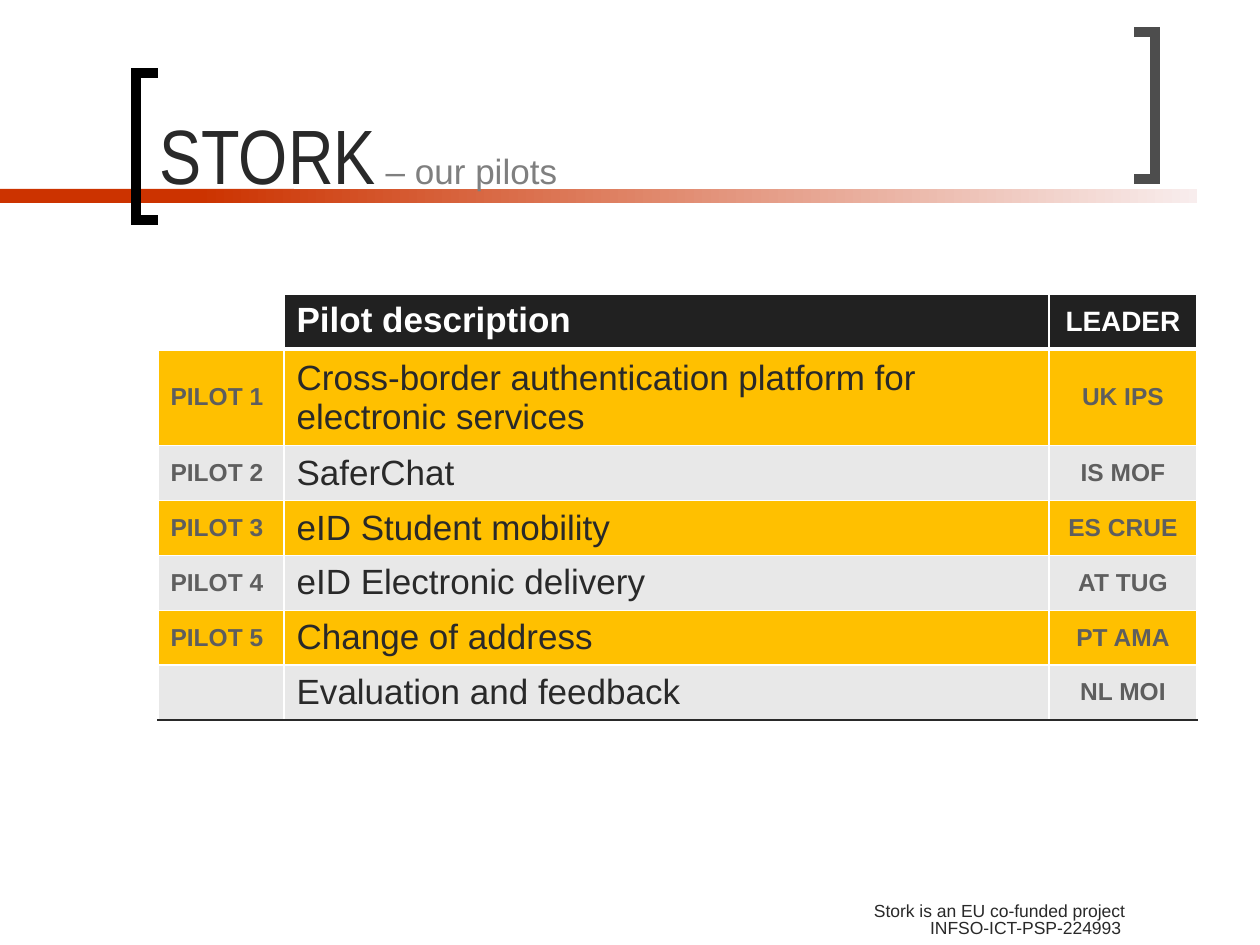
"""Build the STORK pilots slide."""
import dataclasses

import lxml.etree
import pptx
import pptx.dml.color
import pptx.enum.shapes
import pptx.enum.text
import pptx.oxml.ns
import pptx.util

ALIGN = pptx.enum.text.PP_ALIGN
ANCHOR = pptx.enum.text.MSO_ANCHOR


@dataclasses.dataclass(frozen=True)
class Theme:
    """Colours, fonts and type sizes of the slide."""
    red: str = "CC3300"
    blush: str = "F8EDED"
    black: str = "000000"
    slate: str = "4D4D4D"
    ink: str = "292929"
    muted: str = "7F7F7F"
    label: str = "5E5E5E"
    header: str = "212121"
    amber: str = "FFC000"
    silver: str = "E8E8E8"
    white: str = "FFFFFF"
    font: str = "Arial"
    narrow: str = "Arial Narrow"
    title: int = 44
    body: int = 20
    spacer: int = 18
    leader: int = 16
    small: int = 14
    footer: int = 10


def px(length):
    """Turn pixels into EMU."""
    return pptx.util.Emu(length * 914400 // 126)


def rgb(colour):
    """Turn a hex string into a colour."""
    return pptx.dml.color.RGBColor.from_string(colour)


def child(parent, tag, **attributes):
    """Append a drawing element to its parent."""
    return lxml.etree.SubElement(parent, pptx.oxml.ns.qn(tag), **attributes)


class SlideMaker:
    """Hold the theme and the current slide, and draw each kind of element."""

    def __init__(self, theme, slide):
        """Keep the theme and the slide."""
        self.theme = theme
        self.slide = slide

    def bar(self, left, top, width, height, colour, fade_to=None):
        """Draw a borderless bar, solid or fading to the right."""
        shape_type = pptx.enum.shapes.MSO_SHAPE.RECTANGLE
        bar = self.slide.shapes.add_shape(shape_type, px(left), px(top), px(width), px(height))
        bar.shadow.inherit = False
        bar.line.fill.background()
        if fade_to is None:
            bar.fill.solid()
            bar.fill.fore_color.rgb = rgb(colour)
            return
        bar.fill.gradient()
        bar.fill.gradient_angle = 0
        for stop, stop_colour in zip(bar.fill.gradient_stops, (colour, fade_to)):
            stop.color.rgb = rgb(stop_colour)

    def bracket(self, spine, tip, top, bottom, colour):
        """Draw an open square bracket whose arms reach from spine to tip."""
        builder = self.slide.shapes.build_freeform(px(tip), px(top))
        corners = [(spine, top), (spine, bottom), (tip, bottom)]
        builder.add_line_segments([(px(x), px(y)) for x, y in corners], close=False)
        bracket = builder.convert_to_shape()
        bracket.shadow.inherit = False
        bracket.fill.background()
        bracket.line.color.rgb = rgb(colour)
        bracket.line.width = pptx.util.Pt(6)
        child(bracket.line._get_or_add_ln(), "a:miter", lim="800000")

    def span(self, para, text, size, colour, font=None, bold=False):
        """Add one styled run to a paragraph."""
        span = para.add_run()
        span.text = text
        span.font.name = font or self.theme.font
        span.font.size = pptx.util.Pt(size)
        span.font.bold = bold
        span.font.color.rgb = rgb(colour)

    def text(self, left, top, width, height, lines, anchor, align=ALIGN.LEFT, spacing=None):
        """Add a text box; each line is a list of span arguments."""
        box = self.slide.shapes.add_textbox(px(left), px(top), px(width), px(height))
        frame = box.text_frame
        frame.word_wrap = True
        frame.vertical_anchor = anchor
        for index, line in enumerate(lines):
            para = frame.add_paragraph() if index else frame.paragraphs[0]
            para.alignment = align
            para.line_spacing = spacing
            for arguments in line:
                self.span(para, *arguments)

    def cell(self, cell, text, fill, size, colour, bold, align, borders):
        """Style one table cell; borders maps a side to colour and points."""
        cell.fill.solid()
        cell.fill.fore_color.rgb = rgb(fill)
        cell.vertical_anchor = ANCHOR.MIDDLE
        para = cell.text_frame.paragraphs[0]
        para.alignment = align
        if text:
            self.span(para, text, size, colour, bold=bold)
        properties = cell._tc.get_or_add_tcPr()
        for index, side in enumerate("LRTB"):
            line_colour, points = borders.get(side, (self.theme.white, 1))
            line = child(properties, f"a:ln{side}", w=str(pptx.util.Pt(points)))
            child(child(line, "a:solidFill"), "a:srgbClr", val=line_colour)
            properties.insert(index, line)

    def table(self, left, top, widths, heights, rows):
        """Add the pilot table with a dark header and alternating rows."""
        theme = self.theme
        frame = self.slide.shapes.add_table(
            len(rows), len(widths), px(left), px(top), px(sum(widths)), px(sum(heights)))
        table = frame.table
        table.first_row = table.horz_banding = False
        for column, width in zip(table.columns, widths):
            column.width = px(width)
        for row, height in zip(table.rows, heights):
            row.height = px(height)
        header = [(theme.small, theme.white, True, ALIGN.LEFT),
                  (theme.body, theme.white, True, ALIGN.LEFT),
                  (theme.leader, theme.white, True, ALIGN.CENTER)]
        body = [(theme.small, theme.label, True, ALIGN.LEFT),
                (theme.body, theme.ink, False, ALIGN.LEFT),
                (theme.small, theme.label, True, ALIGN.CENTER)]
        edges = {0: {"B": (theme.white, 3)}, 1: {"T": (theme.white, 3)},
                 len(rows) - 1: {"B": (theme.ink, 1)}}
        for r, texts in enumerate(rows):
            band = theme.amber if r % 2 else theme.silver
            for c, text in enumerate(texts):
                fill = band if r else (theme.header if c else theme.white)
                style = body[c] if r else header[c]
                self.cell(table.cell(r, c), text, fill, *style, edges.get(r, {}))
        table.cell(0, 1).vertical_anchor = ANCHOR.TOP


def main():
    """Build and save the deck."""
    theme = Theme()
    deck = pptx.Presentation()
    deck.slide_width, deck.slide_height = px(1260), px(945)
    page = SlideMaker(theme, deck.slides.add_slide(deck.slide_layouts[6]))

    page.bar(0, 189, 294, 14, theme.red)
    page.bar(199, 189, 998, 14, theme.red, theme.blush)
    page.bracket(1155, 1134, 32, 179, theme.slate)
    page.bracket(136, 158, 73, 220, theme.black)
    page.text(861, 902, 281, 43, [
        [("Stork is an EU co-funded project ", theme.footer, theme.ink)],
        [("INFSO-ICT-PSP-224993", theme.footer, theme.ink), (" ", theme.spacer, theme.ink)],
    ], ANCHOR.MIDDLE, ALIGN.RIGHT, 0.5)
    page.text(147, 42, 966, 164, [
        [("STORK", theme.title, theme.ink, theme.narrow),
         (" – our pilots", theme.body, theme.muted)],
    ], ANCHOR.BOTTOM)
    page.table(158, 294, [126, 765, 148], [55, 96, 55, 54, 55, 54, 55], [
        ("", "Pilot description", "LEADER"),
        ("PILOT 1", "Cross-border authentication platform for electronic services", "UK IPS"),
        ("PILOT 2", "SaferChat", "IS MOF"),
        ("PILOT 3", "eID Student mobility", "ES CRUE"),
        ("PILOT 4", "eID Electronic delivery", "AT TUG"),
        ("PILOT 5", "Change of address", "PT AMA"),
        ("", "Evaluation and feedback", "NL MOI"),
    ])
    deck.save("out.pptx")


if __name__ == "__main__":
    main()
